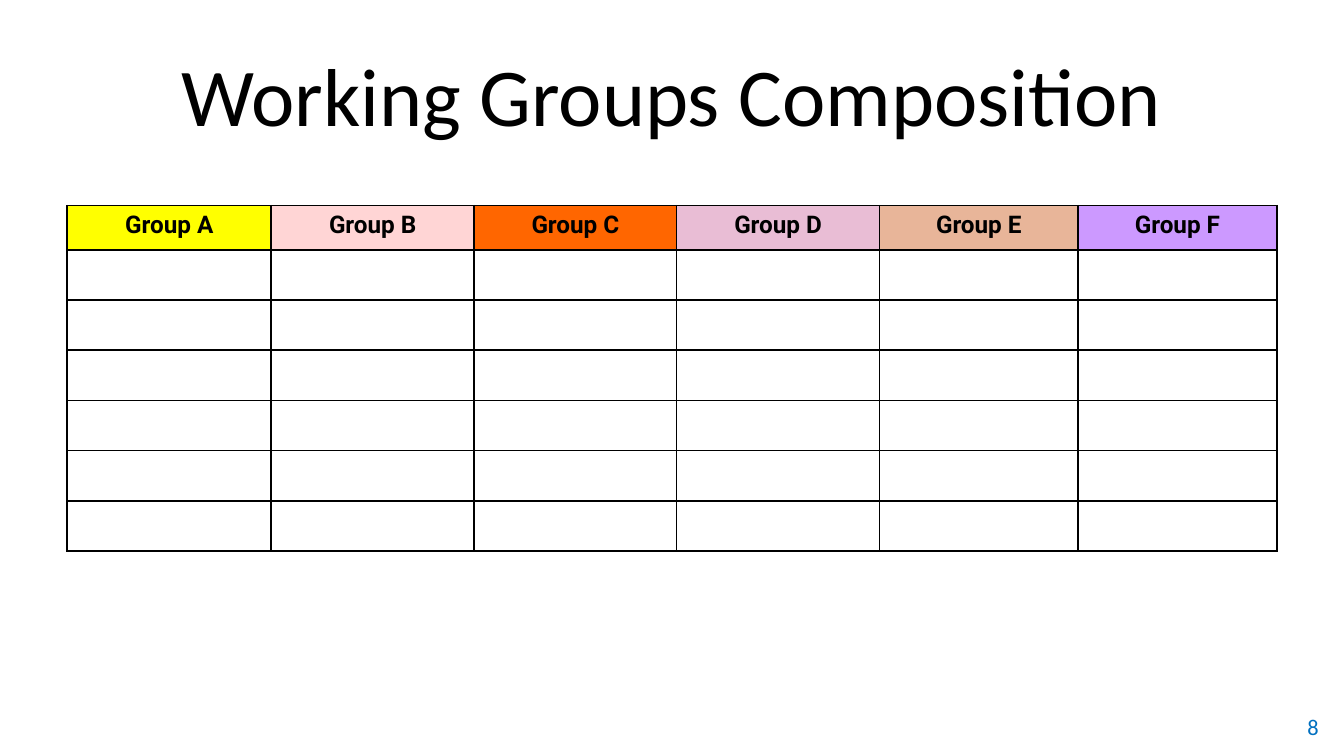
import pptx
import pptx.util
import pptx.dml.color
import pptx.enum.text
import pptx.oxml
import pptx.oxml.ns
from pptx.util import Inches

COLORS = {
    "text": "000000",
    "border": "000000",
    "page": "0070C0",
    "Group A": "FFFF00",
    "Group B": "FFD5D5",
    "Group C": "FF6600",
    "Group D": "E9BDD5",
    "Group E": "E8B599",
    "Group F": "CC99FF",
}
GROUPS = [name for name in COLORS if name.startswith("Group")]
COLUMN_SHARES = [1.52, 1.51, 1.51, 1.51, 1.48, 1.48]
HEADER_HEIGHT = 0.33
MEMBER_ROWS = 6
ALIGN = pptx.enum.text.PP_ALIGN
MIDDLE = pptx.enum.text.MSO_ANCHOR.MIDDLE


def rgb(name):
    return pptx.dml.color.RGBColor.from_string(COLORS[name])


def format_paragraph(p, size, font, color, align, bold=False):
    p.alignment = align
    p.font.size = pptx.util.Pt(size)
    p.font.name = font
    p.font.bold = bold
    p.font.color.rgb = rgb(color)


def add_title(s, left, top, width, height):
    sp = s.shapes.title
    sp.left, sp.top = Inches(left), Inches(top)
    sp.width, sp.height = Inches(width), Inches(height)
    tf = sp.text_frame
    tf.text = "Working Groups Composition"
    tf.vertical_anchor = MIDDLE
    format_paragraph(tf.paragraphs[0], 44, "Calibri", "text", ALIGN.CENTER)


def add_borders(cell):
    tcPr = cell._tc.get_or_add_tcPr()
    # Borders come before the fill in the cell properties
    for i, side in enumerate(("lnL", "lnR", "lnT", "lnB")):
        tcPr.insert(i, pptx.oxml.parse_xml(
            f'<a:{side} {pptx.oxml.ns.nsdecls("a")} w="12700"><a:solidFill>'
            f'<a:srgbClr val="{COLORS["border"]}"/></a:solidFill></a:{side}>'))


def add_groups_table(s, left, top, width, height):
    frame = s.shapes.add_table(MEMBER_ROWS + 1, len(GROUPS), Inches(left),
                               Inches(top), Inches(width), Inches(height))
    table = frame.table
    table.first_row = table.horz_banding = False
    for column, share in zip(table.columns, COLUMN_SHARES):
        column.width = Inches(width * share / sum(COLUMN_SHARES))
    member_height = (height - HEADER_HEIGHT) / MEMBER_ROWS
    for i, row in enumerate(table.rows):
        row.height = Inches(member_height if i else HEADER_HEIGHT)
        for group, cell in zip(GROUPS, row.cells):
            cell.margin_left = cell.margin_right = Inches(0.07)
            cell.margin_top = cell.margin_bottom = Inches(0.04)
            p = cell.text_frame.paragraphs[0]
            if i == 0:
                p.text = group
                cell.fill.solid()
                cell.fill.fore_color.rgb = rgb(group)
            else:
                cell.fill.background()
                # Keeps an empty row from growing to the default text size
                p._p.get_or_add_endParaRPr().set("sz", "1300")
            format_paragraph(p, 13, "Roboto", "text", ALIGN.CENTER, bold=i == 0)
            add_borders(cell)


def add_page_number(s, left, top, width, height):
    sp = s.shapes.add_textbox(Inches(left), Inches(top),
                              Inches(width), Inches(height))
    tf = sp.text_frame
    tf.word_wrap = True
    tf.vertical_anchor = MIDDLE
    p = tf.paragraphs[0]
    p.text = "8"
    p.space_after = pptx.util.Pt(6)
    format_paragraph(p, 12, "Calibri", "page", ALIGN.RIGHT)


def main():
    prs = pptx.Presentation()
    # Widescreen, 16:9
    prs.slide_width, prs.slide_height = Inches(10), Inches(10 * 9 / 16)
    s = prs.slides.add_slide(prs.slide_layouts[5])
    add_title(s, 0.5, 0.23, 9, 0.94)
    add_groups_table(s, 0.5, 1.53, 9, 2.57)
    add_page_number(s, 7.58, 5.26, 2.33, 0.3)
    prs.save("out.pptx")


if __name__ == "__main__":
    main()
